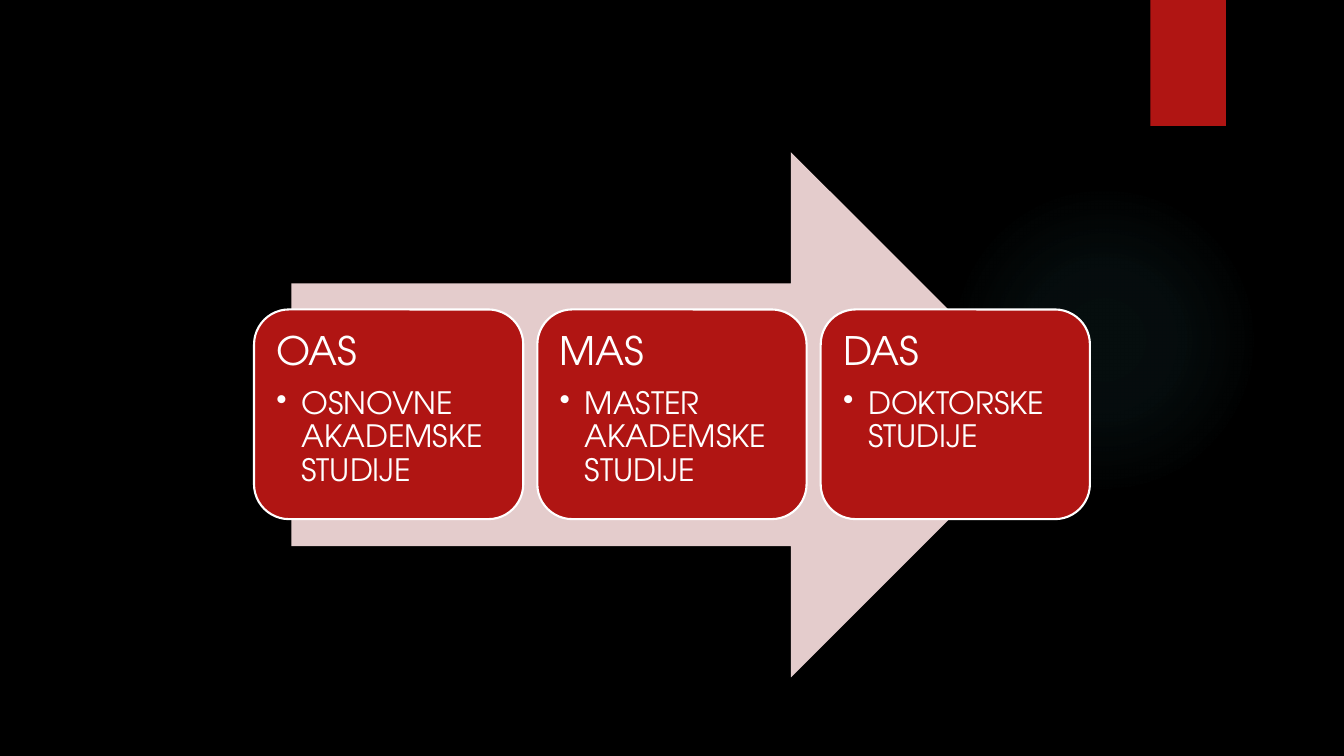
import pptx
import pptx.util
import pptx.oxml
import pptx.dml.color
import pptx.enum.shapes
import pptx.enum.text

Inches = pptx.util.Inches
Pt = pptx.util.Pt
SHAPE = pptx.enum.shapes.MSO_SHAPE
NS = 'xmlns:a="http://schemas.openxmlformats.org/drawingml/2006/main"'

FONT = "TeX Gyre Adventor"
BLACK, WHITE, RED, PINK = "000000", "FFFFFF", "B01513", "E4CCCC"
GLOW_COLOUR = "50B9C1"
GLOW_STOPS = [(0, 7), (36, 6), (69, 0), (100, 0)]
STAGES = [
    ("OAS", "OSNOVNE AKADEMSKE STUDIJE"),
    ("MAS", "MASTER AKADEMSKE STUDIJE"),
    ("DAS", "DOKTORSKE STUDIJE"),
]
STAGE_LEFT, STAGE_TOP, STAGE_STEP = 2.52, 3.07, 2.81
STAGE_WIDTH, STAGE_HEIGHT = 2.67, 2.08
INSET = 0.12


def rgb(colour):
    return pptx.dml.color.RGBColor.from_string(colour)


def add_block(slide, kind, left, top, width, height, colour):
    block = slide.shapes.add_shape(
        kind, Inches(left), Inches(top), Inches(width), Inches(height))
    block.shadow.inherit = False
    block.fill.solid()
    block.fill.fore_color.rgb = rgb(colour)
    block.line.fill.background()
    return block


def add_glow(slide):
    glow = add_block(slide, SHAPE.OVAL, 9.41, 1.83, 3.08, 3.08, GLOW_COLOUR)
    stops = "".join(
        f'<a:gs pos="{place * 1000}"><a:srgbClr val="{GLOW_COLOUR}">'
        f'<a:alpha val="{alpha * 1000}"/></a:srgbClr></a:gs>'
        for place, alpha in GLOW_STOPS)
    gradient = pptx.oxml.parse_xml(
        f'<a:gradFill {NS} rotWithShape="1"><a:gsLst>{stops}</a:gsLst>'
        '<a:path path="circle"><a:fillToRect l="50000" t="50000" r="50000" '
        'b="50000"/></a:path></a:gradFill>')
    properties = glow.element.spPr
    solid = properties.find(pptx.oxml.ns.qn("a:solidFill"))
    properties.replace(solid, gradient)


def add_ribbon(slide):
    ribbon = add_block(slide, SHAPE.RECTANGLE, 11.41, 0, 0.75, 1.25, RED)
    effects = ribbon.element.spPr.find(pptx.oxml.ns.qn("a:effectLst"))
    effects.append(pptx.oxml.parse_xml(
        f'<a:outerShdw {NS} blurRad="{Pt(3)}" dist="{Pt(2)}" dir="5400000" '
        f'rotWithShape="0"><a:srgbClr val="{BLACK}"><a:alpha val="45000"/>'
        '</a:srgbClr></a:outerShdw>'))


def write_line(paragraph, text, size, space_after):
    paragraph.alignment = pptx.enum.text.PP_ALIGN.LEFT
    paragraph.line_spacing = 0.9
    paragraph.space_after = Pt(space_after)
    run = paragraph.add_run()
    run.text = text
    run.font.name = FONT
    run.font.size = Pt(size)
    run.font.color.rgb = rgb(WHITE)


def add_bullet(paragraph):
    properties = paragraph._p.get_or_add_pPr()
    properties.set("marL", str(Inches(0.25)))
    properties.set("indent", str(-Inches(0.25)))
    properties.append(pptx.oxml.parse_xml(f'<a:buChar {NS} char="•"/>'))


def add_stage(slide, left, heading, detail):
    stage = add_block(slide, SHAPE.ROUNDED_RECTANGLE, left, STAGE_TOP,
                      STAGE_WIDTH, STAGE_HEIGHT, RED)
    stage.line.color.rgb = rgb(WHITE)
    stage.line.width = Pt(1.5)
    frame = stage.text_frame
    frame.word_wrap = True
    frame.vertical_anchor = pptx.enum.text.MSO_ANCHOR.TOP
    frame.margin_left = frame.margin_right = Inches(INSET)
    frame.margin_top = frame.margin_bottom = Inches(INSET)
    write_line(frame.paragraphs[0], heading, 28, 10)
    bullet = frame.add_paragraph()
    bullet.level = 1
    add_bullet(bullet)
    write_line(bullet, detail, 22, 3)


def main():
    deck = pptx.Presentation()
    deck.slide_width, deck.slide_height = Inches(13.33), Inches(7.5)
    slide = deck.slides.add_slide(deck.slide_layouts[6])
    slide.background.fill.solid()
    slide.background.fill.fore_color.rgb = rgb(BLACK)
    add_glow(slide)
    add_ribbon(slide)
    add_block(slide, SHAPE.RIGHT_ARROW, 2.89, 1.51, 7.56, 5.21, PINK)
    for number, (heading, detail) in enumerate(STAGES):
        add_stage(slide, STAGE_LEFT + number * STAGE_STEP, heading, detail)
    deck.save("out.pptx")


if __name__ == "__main__":
    main()
